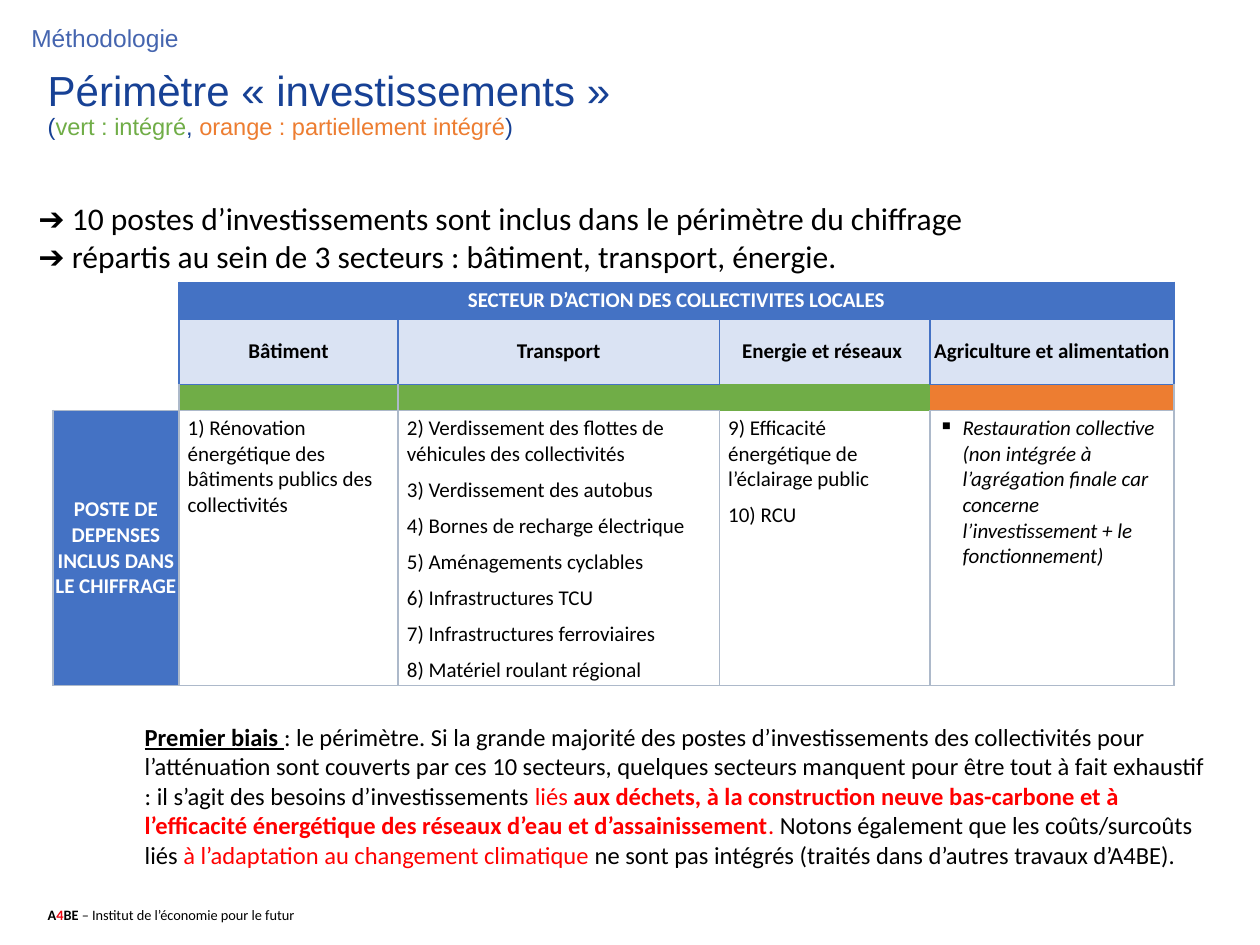
from lxml import etree
from pptx import Presentation
from pptx.dml.color import RGBColor
from pptx.enum.text import MSO_ANCHOR, PP_ALIGN
from pptx.oxml.ns import qn
from pptx.util import Inches, Pt

MID, TOP = MSO_ANCHOR.MIDDLE, MSO_ANCHOR.TOP
LEFT, CENTER = PP_ALIGN.LEFT, PP_ALIGN.CENTER
COL = {
    "black": "000000", "white": "FFFFFF", "red": "FF0000", "mark": "EE0612",
    "navy": "174195", "steel": "4565AF", "blue": "4472C4", "pale": "DAE3F3",
    "grey": "ADB9CA", "green": "70AD47", "orange": "ED7D31",
}


def rgb(name):
    return RGBColor.from_string(COL[name])


def write(frame, paras, size=12, face="Calibri", color="black", bold=False,
          italic=False, align=LEFT, after=None, space=None, bullet=None):
    """Each paragraph is a string or a list of (text, format) runs."""
    for i, runs in enumerate(paras):
        para = frame.paragraphs[0] if i == 0 else frame.add_paragraph()
        para.alignment = align
        if after is not None:
            para.space_after = Pt(after)
        if space:
            para.line_spacing = space
        if bullet:
            props = para._p.get_or_add_pPr()
            props.set("marL", str(Inches(0.19)))
            props.set("indent", str(Inches(-0.19)))
            etree.SubElement(props, qn("a:buChar")).set("char", bullet)
        for text, form in [(runs, {})] if isinstance(runs, str) else runs:
            if text == "\n":
                para.add_line_break()
                continue
            run = para.add_run()
            run.text = text
            font = run.font
            font.name = form.get("face", face)
            font.size = Pt(form.get("size", size))
            font.bold = form.get("bold", bold)
            font.italic = italic
            font.underline = form.get("line", False)
            font.color.rgb = rgb(form.get("color", color))


def place(slide, box, paras, wrap=True, anchor=TOP, **form):
    frame = slide.shapes.add_textbox(*map(Inches, box)).text_frame
    frame.word_wrap = wrap
    frame.vertical_anchor = anchor
    write(frame, paras, **form)


def edge(cell, sides):
    """sides maps L, R, T, B to a colour; the others have no line."""
    props = cell._tc.get_or_add_tcPr()
    for side in "LRTB":
        line = etree.SubElement(props, qn("a:ln" + side))
        line.set("w", str(Pt(1)))
        if side in sides:
            fill = etree.SubElement(line, qn("a:solidFill"))
            etree.SubElement(fill, qn("a:srgbClr")).set("val", COL[sides[side]])
        else:
            etree.SubElement(line, qn("a:noFill"))


def fill_cell(cell, paras=(), fill=None, sides=None, pad=(0, 0),
              anchor=MID, **form):
    edge(cell, sides or {})
    if fill:
        cell.fill.solid()
        cell.fill.fore_color.rgb = rgb(fill)
    else:
        cell.fill.background()
    cell.margin_left = cell.margin_right = Inches(pad[0])
    cell.margin_top = cell.margin_bottom = Inches(pad[1])
    cell.vertical_anchor = anchor
    if paras:
        write(cell.text_frame, paras, **form)
    else:
        # An empty cell must not stretch its row
        end = etree.SubElement(cell.text_frame.paragraphs[0]._p,
                               qn("a:endParaRPr"))
        end.set("sz", "1000")


def heading(slide, box):
    x, y, w, _ = box
    place(slide, (x, y, w, 0.32), ["Méthodologie"],
          size=14, face="Arial", color="steel")
    place(slide, (x + 0.13, y + 0.31, w, 0.79), [[
        ("Périmètre «\u00a0investissements\u00a0» ", {"size": 24}),
        ("\n", {}),
        ("(", {}),
        ("vert : intégré", {"color": "green"}),
        (", ", {}),
        ("orange : partiellement intégré", {"color": "orange"}),
        (")", {}),
    ]], anchor=MID, size=13.5, face="Arial", color="navy", space=0.9)


def sectors(slide, box):
    cols, rows = (1, 1.74, 2.55, 1.67, 1.94), (0.29, 0.52, 0.21, 1.98)
    shape = slide.shapes.add_table(len(rows), len(cols), *map(Inches, box))
    table = shape.table
    table.first_row = table.horz_banding = False
    for col, wide in zip(table.columns, cols):
        col.width = Inches(wide)
    for row, high in zip(table.rows, rows):
        row.height = Inches(high)
    blue, grey = dict.fromkeys("LRTB", "blue"), dict.fromkeys("LRTB", "grey")
    label = {"bold": True, "align": CENTER}

    # Blank corner and row label
    for i, right in enumerate(("blue", "blue", "grey")):
        sides = dict.fromkeys("LTB", "white") | {"R": right}
        if i == 2:
            sides["B"] = "grey"
        fill_cell(table.cell(i, 0), sides=sides)
    fill_cell(table.cell(3, 0), ["POSTE DE DEPENSES INCLUS DANS LE CHIFFRAGE"],
              "blue", grey, color="white", **label)

    # Banner
    table.cell(0, 1).merge(table.cell(0, 4))
    fill_cell(table.cell(0, 1), ["SECTEUR D’ACTION DES COLLECTIVITES LOCALES"],
              "blue", blue, color="white", **label)
    for j in range(2, 5):
        edge(table.cell(0, j), blue)

    # Sector names, status strip and items
    names = ("Bâtiment", "Transport", "Energie et réseaux ",
             "Agriculture et alimentation")
    strip = (
        ("green", grey | {"T": "blue"}),
        ("green", {"L": "grey", "T": "blue", "B": "grey"}),
        ("green", {}),
        ("orange", {"T": "blue", "R": "grey", "B": "grey"}),
    )
    items = (
        ["1) Rénovation énergétique des bâtiments publics des collectivités"],
        ["2) Verdissement des flottes de véhicules des collectivités",
         "3) Verdissement des autobus", "4) Bornes de recharge électrique",
         "5) Aménagements cyclables", "6) Infrastructures TCU",
         "7) Infrastructures ferroviaires", "8) Matériel roulant régional"],
        ["9) Efficacité énergétique de l’éclairage public", "10) RCU"],
        ["Restauration collective (non intégrée à l’agrégation finale car "
         "concerne l’investissement + le fonctionnement)"],
    )
    forms = ({}, {"after": 6}, {"after": 6}, {"italic": True, "bullet": "▪"})
    for j, (name, (tint, sides), item, form) in enumerate(
            zip(names, strip, items, forms), 1):
        open_side = j == 3  # this column has no line round its strip
        skip = "B" if open_side else ""
        fill_cell(table.cell(1, j), [name], "pale",
                  {k: v for k, v in blue.items() if k != skip}, **label)
        fill_cell(table.cell(2, j), fill=tint, sides=sides)
        skip = "T" if open_side else ""
        fill_cell(table.cell(3, j), item, "white",
                  {k: v for k, v in grey.items() if k != skip},
                  pad=(0.07, 0.04), anchor=TOP, **form)


def bias(slide, box):
    red = {"color": "red"}
    place(slide, box, [[
        ("Premier biais ", {"bold": True, "line": True}),
        (": le périmètre. Si la grande majorité des postes d’investissements "
         "des collectivités pour l’atténuation sont couverts par ces 10 "
         "secteurs, quelques secteurs manquent pour être tout à fait "
         "exhaustif : il s’agit des besoins d’investissements ", {}),
        ("liés ", red),
        ("aux déchets, à la construction neuve bas-carbone et à l’efficacité "
         "énergétique des réseaux d’eau et d’assainissement",
         red | {"bold": True}),
        (". ", red),
        ("Notons également que les coûts/surcoûts liés ", {}),
        ("à l’adaptation au changement climatique ", red),
        ("ne sont pas intégrés (traités dans d’autres travaux d’A4BE).", {}),
    ]], size=14)


def footer(slide, box):
    bold = {"bold": True}
    place(slide, box, [[
        ("A", bold), ("4", bold | {"color": "mark"}), ("BE ", bold),
        ("– Institut de l’économie pour le futur", {}),
    ]], size=8.2)


def main():
    deck = Presentation()
    deck.slide_width, deck.slide_height = Inches(10), Inches(7.5)
    slide = deck.slides.add_slide(deck.slide_layouts[6])
    footer(slide, (0.28, 7.14, 3.39, 0.24))
    heading(slide, (0.15, 0.13, 9.45, 1.1))
    sectors(slide, (0.42, 2.24, 8.9, 3))
    # Key points
    place(slide, (0.15, 1.53, 7.75, 0.71), [
        " ➔ 10 postes d’investissements sont inclus dans le périmètre du chiffrage",
        " ➔ répartis au sein de 3 secteurs : bâtiment, transport, énergie.",
    ], wrap=False, size=18)
    bias(slide, (1.05, 5.68, 8.62, 1.51))
    deck.save("out.pptx")


if __name__ == "__main__":
    main()
